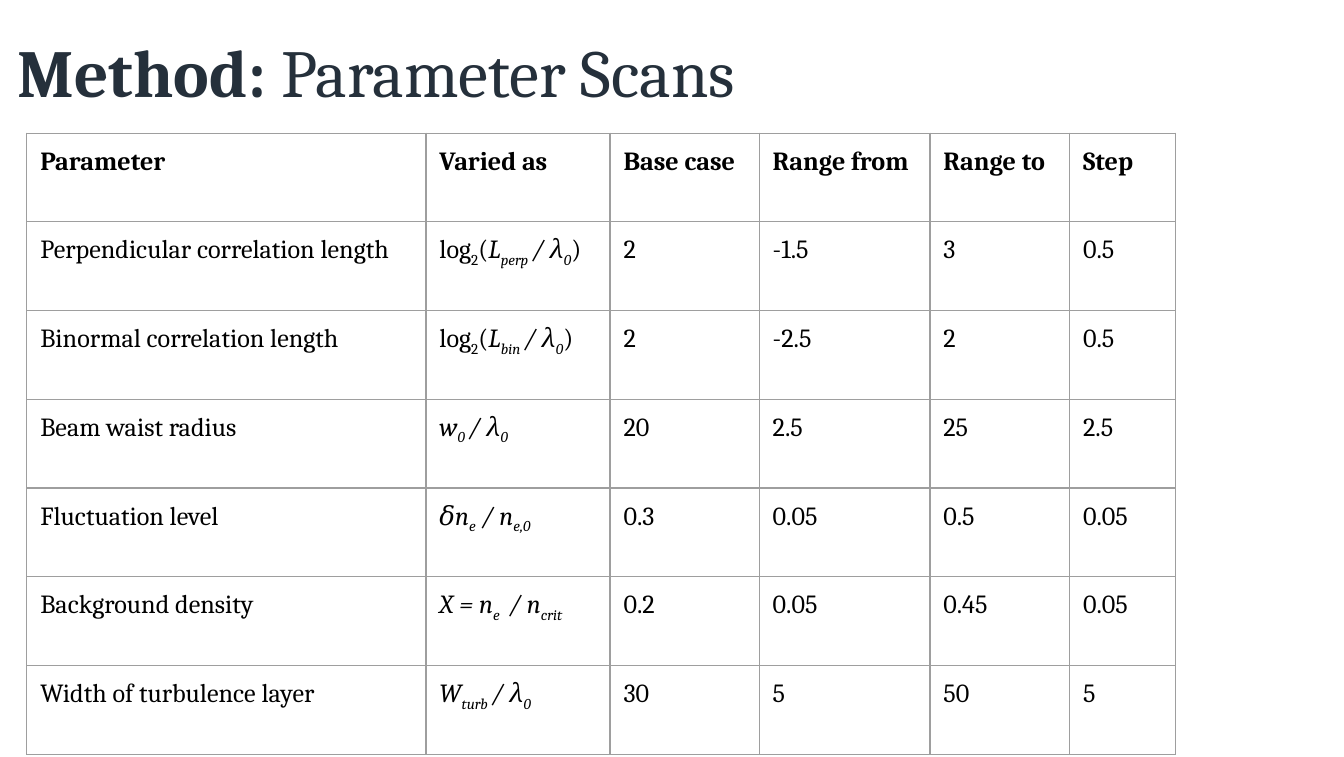
from lxml.etree import SubElement as Sub
from pptx import Presentation
from pptx.dml.color import RGBColor as RGB
from pptx.enum.text import MSO_ANCHOR as Anchor, PP_ALIGN as Align
from pptx.oxml.ns import qn
from pptx.util import Inches, Pt

# Content: a formula is a list of (text, style) runs; i = italic, s = subscript
TITLE = [("Method: ", True), ("Parameter Scans", False)]
HEAD = ["Parameter", "Varied as", "Base case", "Range from", "Range to", "Step"]
WAVE = [("/ λ", "i"), ("0", "is")]


def log(sub):
    return [("log", ""), ("2", "s"), ("(", ""), ("L", "i"),
            (sub + " ", "is"), *WAVE, (")", "")]


ROWS = [
    ["Perpendicular correlation length", log("perp"), "2", "-1.5", "3", "0.5"],
    ["Binormal correlation length", log("bin"), "2", "-2.5", "2", "0.5"],
    ["Beam waist radius", [("w", "i"), ("0 ", "is"), *WAVE],
     "20", "2.5", "25", "2.5"],
    ["Fluctuation level",
     [("𝛿n", "i"), ("e", "is"), (" / n", "i"), ("e,0", "is")],
     "0.3", "0.05", "0.5", "0.05"],
    ["Background density",
     [("X = n", "i"), ("e ", "is"), (" / n", "i"), ("crit", "is")],
     "0.2", "0.05", "0.45", "0.05"],
    ["Width of turbulence layer", [("W", "i"), ("turb ", "is"), *WAVE],
     "30", "5", "50", "5"],
]

# Theme and grid
THEME = {"font": "Cambria", "title": "25303B", "text": "000000",
         "line": "9E9E9E", "big": 36, "small": 14, "rule": 0.75}
COLS = [2.97, 1.37, 1.11, 1.27, 1.04, 0.79]
ROW_H = 0.66
PAD = 0.1


def assign(obj, vals):
    for key, val in vals.items():
        setattr(obj, key, val)


def add_run(para, text, size, color, bold=False, style=""):
    run = para.add_run()
    run.text = text
    assign(run.font, {"name": THEME["font"], "size": Pt(size), "bold": bold,
                      "italic": "i" in style})
    run.font.color.rgb = RGB.from_string(color)
    if "s" in style:
        run.font._element.set("baseline", "-25000")


def add_lines(cell):
    props = cell._tc.get_or_add_tcPr()
    for n, side in enumerate(("lnL", "lnR", "lnT", "lnB")):
        line = props.makeelement(qn("a:" + side), {"w": str(Pt(THEME["rule"]))})
        fill = Sub(line, qn("a:solidFill"))
        Sub(fill, qn("a:srgbClr"), val=THEME["line"])
        props.insert(n, line)


deck = Presentation()
assign(deck, {"slide_width": Inches(10), "slide_height": Inches(5.63)})
slide = deck.slides.add_slide(deck.slide_layouts[5])

# Title
title = slide.shapes.title
assign(title, {"left": Inches(0.04), "top": Inches(0.16),
               "width": Inches(7.83), "height": Inches(0.73)})
frame = title.text_frame
assign(frame, {"vertical_anchor": Anchor.MIDDLE, "word_wrap": True,
               "margin_left": Inches(0.09), "margin_right": Inches(0.09),
               "margin_top": Inches(0.04), "margin_bottom": Inches(0.04)})
para = frame.paragraphs[0]
para.alignment = Align.LEFT
for text, bold in TITLE:
    add_run(para, text, THEME["big"], THEME["title"], bold)

# Table
grid = [HEAD] + ROWS
table = slide.shapes.add_table(
    len(grid), len(COLS), Inches(0.2), Inches(0.99),
    Inches(sum(COLS)), Inches(ROW_H * len(grid))).table
assign(table, {"first_row": False, "horz_banding": False})
for col, width in zip(table.columns, COLS):
    col.width = Inches(width)
for r, row in enumerate(grid):
    table.rows[r].height = Inches(ROW_H)
    for c, item in enumerate(row):
        cell = table.cell(r, c)
        cell.fill.background()
        add_lines(cell)
        assign(cell, {"margin_" + side: Inches(PAD)
                      for side in ("left", "right", "top", "bottom")})
        runs = [(item, "")] if isinstance(item, str) else item
        for text, style in runs:
            add_run(cell.text_frame.paragraphs[0], text, THEME["small"],
                    THEME["text"], r == 0, style)

deck.save("out.pptx")
